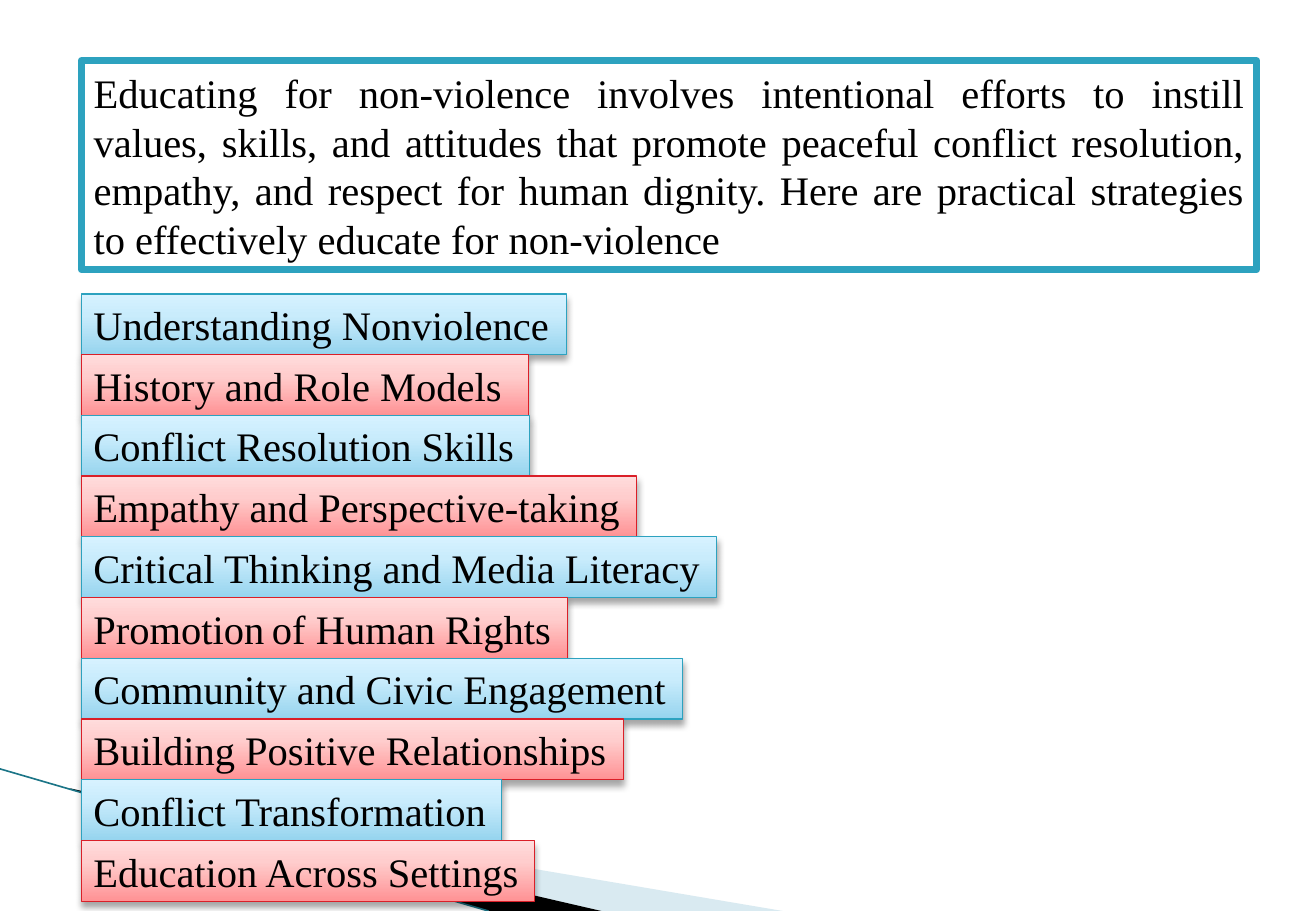
from copy import deepcopy

from pptx import Presentation
from pptx import util as u
from pptx.dml.color import RGBColor
from pptx.enum import shapes, text
from pptx.oxml.ns import qn
from lxml import etree

PX = 9144  # EMU per px, 100 px to the inch
FONT = "Times New Roman"
BODY_SIZE = 24

COLORS = {
    "black": "000000",
    "white": "FFFFFF",
    "teal": "2DA2BF",
    "red": "DA1F28",
    "pale_wedge": "A0CBDC",
    "sweep": "1B7587",
}
# Gradient stops run from the bottom edge to the top edge.
SCHEMES = [
    ("teal", ["96D4EE", "C9ECFC", "D7F2FF"]),
    ("red", ["FF9294", "FFCDCD", "FFDCDC"]),
]
STOP_POSITIONS = [0, 0.65, 1]

INTRO = (
    "Educating for non-violence involves intentional efforts to instill values, "
    "skills, and attitudes that promote peaceful conflict resolution, empathy, and "
    "respect for human dignity. Here are practical strategies to effectively "
    "educate for non-violence"
)
# Each strategy: width in px, then its runs as (words, size).
STRATEGIES = [
    (399, [("Understanding Nonviolence", BODY_SIZE)]),
    (368, [("History and Role Models", BODY_SIZE)]),
    (369, [("Conflict Resolution Skills", BODY_SIZE)]),
    (457, [("Empathy and Perspective-taking", BODY_SIZE)]),
    (523, [("Critical Thinking and Media Literacy", BODY_SIZE)]),
    (400, [("Promotion", BODY_SIZE), (" ", 18), ("of Human Rights", BODY_SIZE)]),
    (495, [("Community and Civic Engagement", BODY_SIZE)]),
    (446, [("Building Positive Relationships", BODY_SIZE)]),
    (346, [("Conflict Transformation", BODY_SIZE)]),
    (373, [("Education Across Settings", BODY_SIZE)]),
]
LEFT, FIRST_TOP, ROW_HEIGHT = 67, 242, 50


def px(value):
    return u.Emu(value * PX)


def rgb(name):
    return RGBColor.from_string(COLORS[name])


def write_runs(frame, runs, align):
    frame.word_wrap = True
    frame.auto_size = text.MSO_AUTO_SIZE.NONE
    frame.vertical_anchor = text.MSO_ANCHOR.MIDDLE
    paragraph = frame.paragraphs[0]
    paragraph.alignment = align
    for words, size in runs:
        run = paragraph.add_run()
        run.text = words
        run.font.name = FONT
        run.font.size = u.Pt(size)
        run.font.color.rgb = rgb("black")


def set_gradient(shape, hexes):
    shape.fill.gradient()
    stop_list = shape._element.spPr.find(".//" + qn("a:gsLst"))
    stop_list.append(deepcopy(stop_list[0]))
    for stop, position, value in zip(shape.fill.gradient_stops, STOP_POSITIONS, hexes):
        stop.color.rgb = RGBColor.from_string(value)
        stop.position = position
    shape.fill.gradient_angle = 90


def add_alpha(color_element, percent):
    etree.SubElement(color_element, qn("a:alpha"), val=str(percent * 1000))


def set_shadow(shape):
    """Give the shape a soft black shadow straight below it."""
    shape.shadow.inherit = False
    effects = shape._element.spPr.find(qn("a:effectLst"))
    shadow = etree.SubElement(
        effects, qn("a:outerShdw"), blurRad=str(u.Pt(4)), dist=str(u.Pt(3)),
        dir="5400000", rotWithShape="0",
    )
    color = etree.SubElement(shadow, qn("a:srgbClr"), val=COLORS["black"])
    add_alpha(color, 35)


def add_wedge(slide, points, color, opacity=100):
    builder = slide.shapes.build_freeform(*points[0], scale=PX)
    builder.add_line_segments(points[1:], close=True)
    wedge = builder.convert_to_shape()
    wedge.shadow.inherit = False
    wedge.fill.solid()
    wedge.fill.fore_color.rgb = rgb(color)
    wedge.line.fill.background()
    if opacity < 100:
        add_alpha(wedge._element.spPr.find(qn("a:solidFill"))[0], opacity)


def add_sweep(slide, start, end):
    sweep = slide.shapes.add_connector(
        shapes.MSO_CONNECTOR.STRAIGHT, *map(px, start + end)
    )
    sweep.line.color.rgb = rgb("sweep")
    sweep.line.width = u.Pt(0.95)
    etree.SubElement(sweep._element.spPr, qn("a:effectLst"))


def fill_intro(slide):
    intro = slide.shapes.title
    intro.left, intro.top, intro.width, intro.height = map(px, (LEFT, 50, 967, 172))
    intro.fill.solid()
    intro.fill.fore_color.rgb = rgb("white")
    intro.line.color.rgb = rgb("teal")
    intro.line.width = u.Pt(4.33)
    write_runs(intro.text_frame, [(INTRO, BODY_SIZE)], text.PP_ALIGN.JUSTIFY)


def add_strategy(slide, row, width, runs):
    border, hexes = SCHEMES[row % len(SCHEMES)]
    top = FIRST_TOP + row * ROW_HEIGHT
    label = slide.shapes.add_shape(
        shapes.MSO_SHAPE.RECTANGLE, *map(px, (LEFT, top, width, ROW_HEIGHT))
    )
    set_gradient(label, hexes)
    label.line.color.rgb = rgb(border)
    label.line.width = u.Pt(0.75)
    set_shadow(label)
    write_runs(label.text_frame, runs, text.PP_ALIGN.LEFT)


def main():
    deck = Presentation()
    deck.slide_width, deck.slide_height = px(1083), px(750)
    slide = deck.slides.add_slide(deck.slide_layouts.get_by_name("Title Only"))
    add_wedge(slide, [(59, 651), (644, 750), (494, 750), (59, 650)], "pale_wedge", 40)
    add_wedge(slide, [(58, 649), (495, 750), (403, 750), (58, 650)], "black")
    add_sweep(slide, (0, 633), (402, 750))
    fill_intro(slide)
    for row, (width, runs) in enumerate(STRATEGIES):
        add_strategy(slide, row, width, runs)
    deck.save("out.pptx")


if __name__ == "__main__":
    main()
